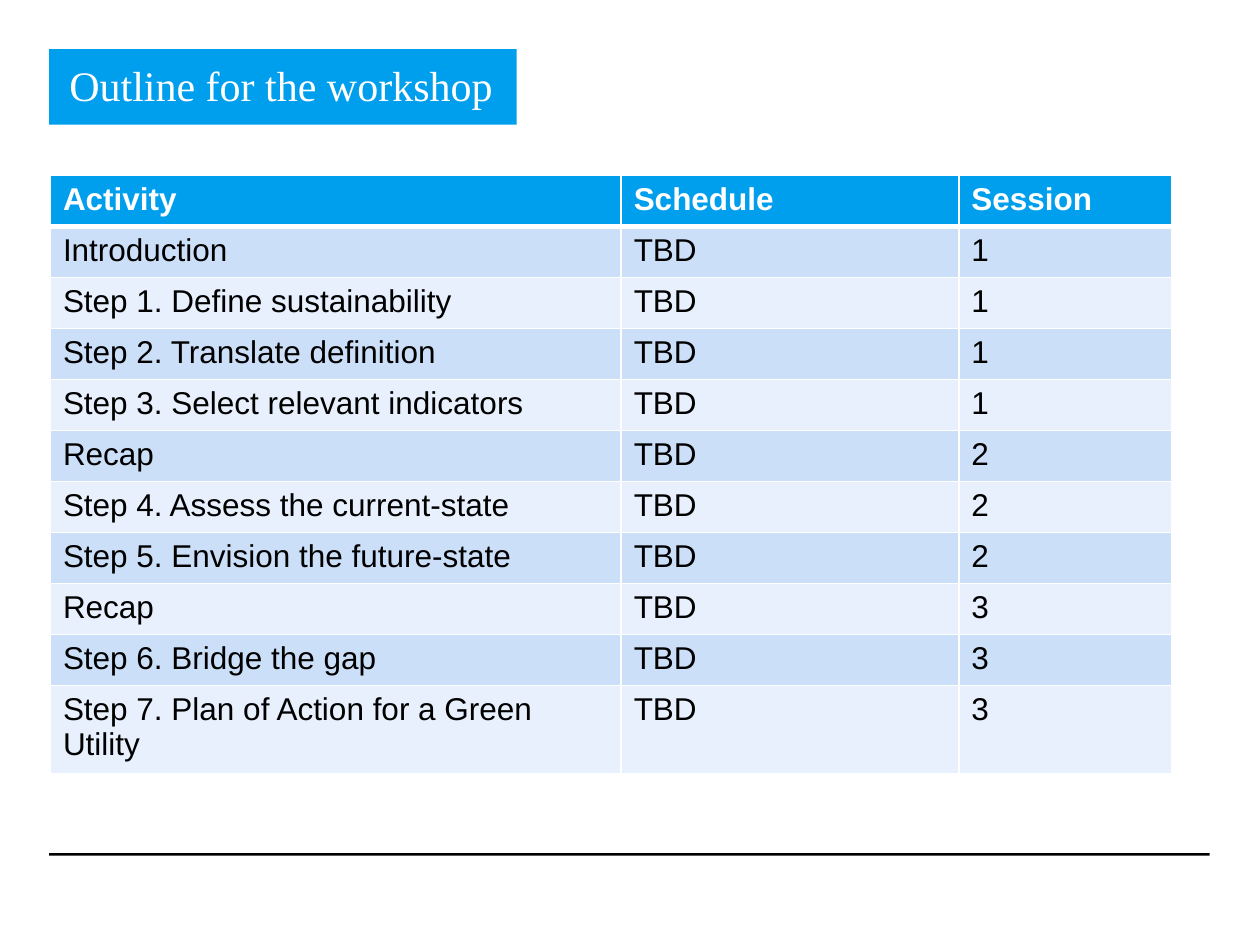
from lxml.etree import SubElement
from pptx import Presentation
from pptx.dml.color import RGBColor
from pptx.enum.shapes import MSO_SHAPE as Shape
from pptx.enum.text import MSO_ANCHOR as Anchor, MSO_AUTO_SIZE as AutoSize, PP_ALIGN as Align
from pptx.oxml.ns import qn
from pptx.util import Inches, Pt

BLUE, WHITE, BLACK = "009FEE", "FFFFFF", "000000"
BANDS = ["E7F0FC", "CCDFF8"]
THICK_EDGES = [(0, "lnB"), (1, "lnT")]


def paint(fill, color):
    fill.solid()
    fill.fore_color.rgb = RGBColor.from_string(color)


def add_bar(page, left, top, width, height, color):
    bar = page.shapes.add_shape(
        Shape.RECTANGLE, Inches(left), Inches(top), Inches(width), Inches(height)
    )
    bar.shadow.inherit = False
    bar.line.fill.background()
    paint(bar.fill, color)
    return bar


deck = Presentation()
deck.slide_width, deck.slide_height = Inches(10), Inches(7.5)
page = deck.slides.add_slide(deck.slide_layouts[6])

add_bar(page, 0.39, 6.77, 9.21, 0.02, BLACK)

title = add_bar(page, 0.39, 0.39, 3.71, 0.6, BLUE)
frame = title.text_frame
frame.word_wrap = False
frame.auto_size = AutoSize.SHAPE_TO_FIT_TEXT
frame.vertical_anchor = Anchor.TOP
frame.margin_left = frame.margin_right = Inches(0.16)
frame.margin_top, frame.margin_bottom = Inches(0.08), Inches(0.12)
frame.text = "Outline for the workshop"
para = frame.paragraphs[0]
para.alignment = Align.LEFT
para.font.size = Pt(24)
para.font.name = "Times New Roman"
paint(para.font.fill, WHITE)

activities = [
    ("Introduction", 1),
    ("Step 1. Define sustainability", 1),
    ("Step 2. Translate definition", 1),
    ("Step 3. Select relevant indicators", 1),
    ("Recap", 2),
    ("Step 4. Assess the current-state", 2),
    ("Step 5. Envision the future-state", 2),
    ("Recap", 3),
    ("Step 6. Bridge the gap", 3),
    ("Step 7. Plan of Action for a Green Utility", 3),
]
rows = [("Activity", "Schedule", "Session")]
rows += [(activity, "TBD", str(session)) for activity, session in activities]

table = page.shapes.add_table(
    len(rows), 3, Inches(0.4), Inches(1.39), Inches(8.9), Inches(4.46)
).table
for column, width in zip(table.columns, [4.53, 2.68, 1.69]):
    column.width = Inches(width)

for row, texts in enumerate(rows):
    header = row == 0
    for col, text in enumerate(texts):
        cell = table.cell(row, col)
        cell.text = text
        font = cell.text_frame.paragraphs[0].font
        font.size = Pt(18)
        font.name = "Arial"
        font.bold = header
        paint(font.fill, WHITE if header else BLACK)
        properties = cell._tc.get_or_add_tcPr()
        for edge in ["lnL", "lnR", "lnT", "lnB"]:
            points = 3 if (row, edge) in THICK_EDGES else 1
            border = SubElement(properties, qn(f"a:{edge}"), w=str(Pt(points)))
            SubElement(SubElement(border, qn("a:solidFill")), qn("a:srgbClr"), val=WHITE)
        paint(cell.fill, BLUE if header else BANDS[row % 2])

deck.save("out.pptx")
